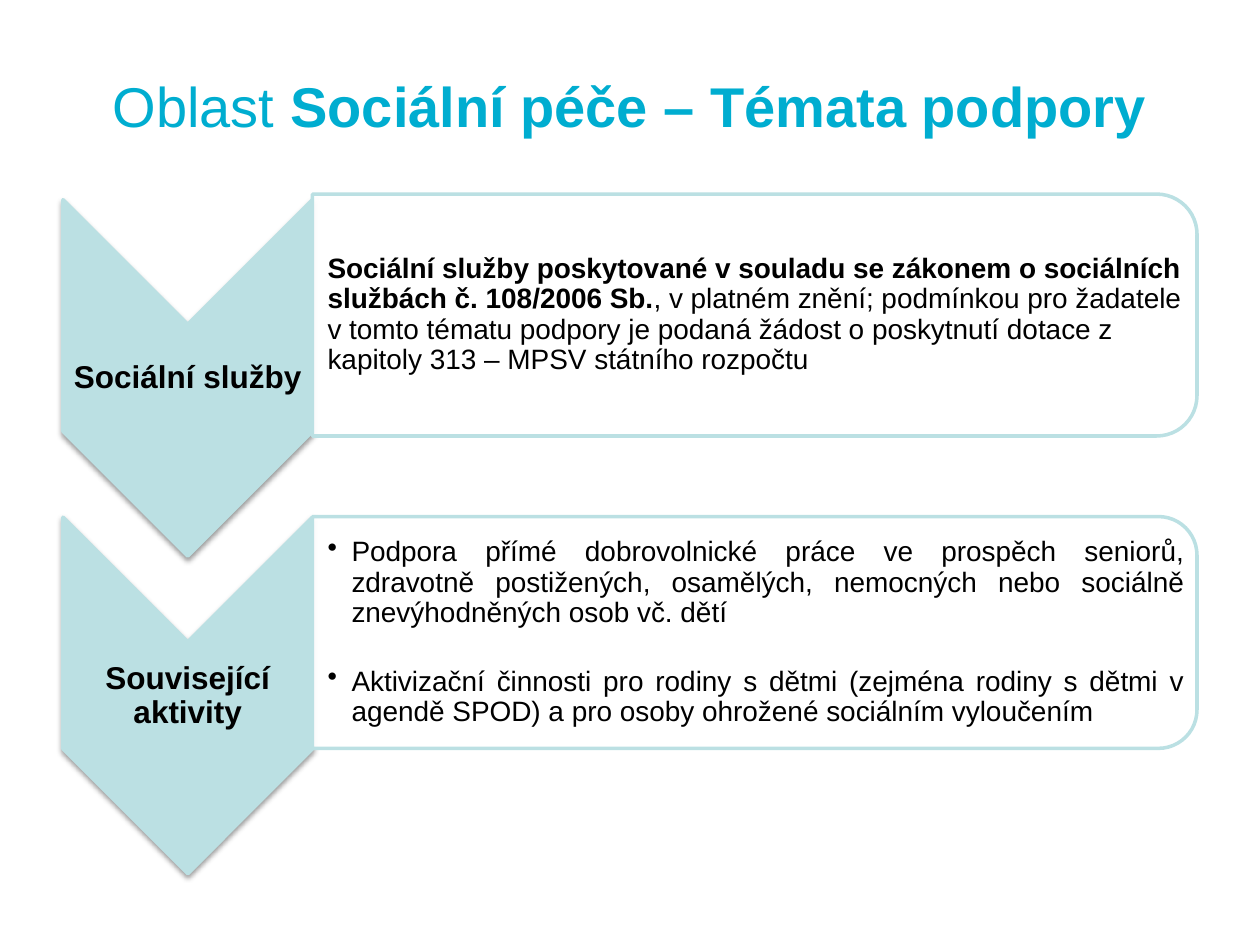
from lxml import etree
from pptx import Presentation
from pptx import util as u
from pptx.dml.color import RGBColor
from pptx.enum import shapes, text
from pptx.oxml import ns

COLORS = {"title": "00ADD0", "accent": "BBE0E3", "panel": "FFFFFF",
          "body": "000000", "shadow": "000000"}
ALIGN = text.PP_ALIGN


class SlideBuilder:
    """Holds the style and the current slide."""
    font = "Arial"

    def __init__(self, slide):
        self.slide = slide

    def color(self, name):
        return RGBColor.from_string(COLORS[name])

    def add_xml(self, parent, tag, **attributes):
        return etree.SubElement(parent, ns.qn(tag), attributes)

    def rotated(self, preset, centre_x, centre_y, width, height, fill):
        """Add a preset turned by 90°; width and height are as seen."""
        shape = self.slide.shapes.add_shape(
            preset, u.Inches(centre_x - height / 2), u.Inches(centre_y - width / 2),
            u.Inches(height), u.Inches(width))
        shape.rotation = 90
        shape.shadow.inherit = False
        shape.fill.solid()
        shape.fill.fore_color.rgb = self.color(fill)
        shape.line.color.rgb = self.color("accent")
        shape.line.width = u.Pt(2)
        return shape

    def chevron(self, *box):
        arrow = self.rotated(shapes.MSO_SHAPE.CHEVRON, *box, "accent")
        effects = arrow.element.spPr.find(ns.qn("a:effectLst"))
        shadow = self.add_xml(effects, "a:outerShdw", blurRad="40000", dist="20000",
                              dir="5400000", rotWithShape="0")
        tint = self.add_xml(shadow, "a:srgbClr", val=COLORS["shadow"])
        self.add_xml(tint, "a:alpha", val="38000")

    def panel(self, *box):
        frame = self.rotated(shapes.MSO_SHAPE.ROUND_2_SAME_RECTANGLE, *box, "panel")
        tint = frame.element.spPr.find(ns.qn("a:solidFill"))[0]
        self.add_xml(tint, "a:alpha", val="90000")

    def text_box(self, box, paragraphs, size, color="body", insets=None,
                 bullet=False, **formats):
        """Each paragraph is a list of (words, bold) runs."""
        frame = self.slide.shapes.add_textbox(*map(u.Inches, box)).text_frame
        frame.word_wrap = True
        frame.vertical_anchor = text.MSO_ANCHOR.MIDDLE
        for side, inset in (insets or {}).items():
            setattr(frame, f"margin_{side}", u.Inches(inset))
        for number, runs in enumerate(paragraphs):
            paragraph = frame.add_paragraph() if number else frame.paragraphs[0]
            if bullet:
                properties = paragraph._p.get_or_add_pPr()
                properties.set("marL", str(u.Inches(0.19)))
                properties.set("indent", str(u.Inches(-0.19)))
                self.add_xml(properties, "a:buChar", char="•")
            if number:
                paragraph.space_before = u.Pt(22)
            for name, value in formats.items():
                setattr(paragraph, name, value)
            for words, bold in runs:
                run = paragraph.add_run()
                run.text = words
                style = {"name": self.font, "size": u.Pt(size), "bold": bold}
                for name, value in style.items():
                    setattr(run.font, name, value)
                run.font.color.rgb = self.color(color)


TOPICS = [
    {"label": "Sociální služby", "panel_height": 1.92,
     "format": {"alignment": ALIGN.LEFT},
     "details": [[
         ("Sociální služby poskytované v souladu se zákonem o sociálních "
          "službách č. 108/2006 Sb.", True),
         (", v platném znění; podmínkou pro žadatele v tomto tématu podpory "
          "je podaná žádost o poskytnutí dotace z kapitoly 313 – MPSV "
          "státního rozpočtu", False)]]},
    {"label": "Související aktivity", "panel_height": 1.84,
     "format": {"alignment": ALIGN.JUSTIFY, "bullet": True},
     "details": [
         [("Podpora přímé dobrovolnické práce ve prospěch seniorů, zdravotně "
           "postižených, osamělých, nemocných nebo sociálně znevýhodněných "
           "osob vč. dětí", False)],
         [("Aktivizační činnosti pro rodiny s dětmi (zejména rodiny s dětmi v "
           "agendě SPOD) a pro osoby ohrožené sociálním vyloučením", False)]]},
]


def main():
    deck = Presentation()
    deck.slide_width, deck.slide_height = u.Inches(10), u.Inches(7.5)
    builder = SlideBuilder(deck.slides.add_slide(deck.slide_layouts[6]))

    # Title
    builder.text_box((0.25, 0.21, 9.5, 1.25),
                     [[("Oblast ", False), ("Sociální péče – Témata podpory", True)]],
                     32, "title", alignment=ALIGN.CENTER)

    # One chevron with its panel per topic
    left, arrow_width, arrow_height, panel_width = 0.5, 1.98, 2.83, 7.02
    panel_left = left + arrow_width
    tight = dict.fromkeys(("left", "top", "right", "bottom"), 0.01)
    for row, topic in enumerate(TOPICS):
        arrow_y = 3 + row * 2.52
        panel_y = arrow_y - 0.5
        text_height = topic["panel_height"] - 0.18

        builder.chevron(left + arrow_width / 2, arrow_y, arrow_width, arrow_height)
        builder.text_box((left, arrow_y - 0.42, arrow_width, 0.85),
                         [[(topic["label"], True)]], 18, insets=tight,
                         alignment=ALIGN.CENTER, line_spacing=0.9)

        builder.panel(panel_left + panel_width / 2, panel_y,
                      panel_width, topic["panel_height"])
        builder.text_box((panel_left, panel_y - text_height / 2, 6.93, text_height),
                         topic["details"], 16, insets={**tight, "left": 0.12},
                         line_spacing=0.9, **topic["format"])

    deck.save("out.pptx")


if __name__ == "__main__":
    main()
